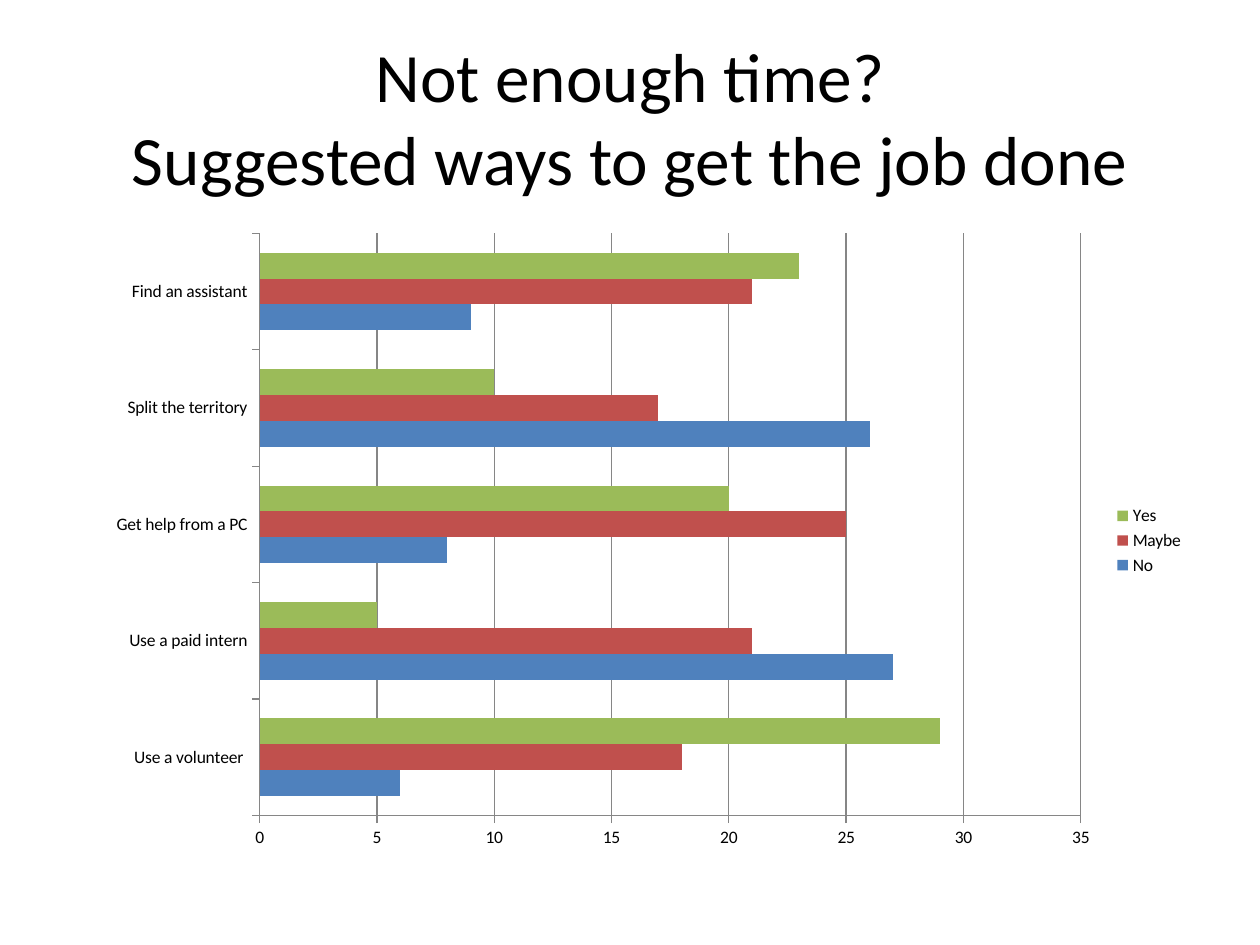
from pptx import Presentation
from pptx.chart.data import CategoryChartData
from pptx.dml.color import RGBColor
from pptx.enum.chart import XL_CHART_TYPE, XL_LEGEND_POSITION, XL_TICK_MARK
from pptx.enum.text import MSO_ANCHOR, PP_ALIGN
from pptx.util import Inches, Pt

BAR_CLUSTERED = XL_CHART_TYPE.BAR_CLUSTERED
LEGEND_RIGHT = XL_LEGEND_POSITION.RIGHT
TICK_OUTSIDE = XL_TICK_MARK.OUTSIDE
MIDDLE = MSO_ANCHOR.MIDDLE
CENTER = PP_ALIGN.CENTER

FONT = "Calibri"
BLACK = "000000"
AXIS_GRAY = "868686"
TITLE = "Not enough time?\vSuggested ways to get the job done"
SUGGESTIONS = [
    "Use a volunteer ",
    "Use a paid intern",
    "Get help from a PC",
    "Split the territory",
    "Find an assistant",
]
ANSWERS = [
    ("No", "4F81BD", [6, 27, 8, 26, 9]),
    ("Maybe", "C0504D", [18, 21, 25, 17, 21]),
    ("Yes", "9BBB59", [29, 5, 20, 10, 23]),
]


def color(value):
    """Turn a hex string into a colour."""
    return RGBColor.from_string(value)


def apply_format(target, values):
    """Set each attribute named in a dict of format values."""
    for name, value in values.items():
        setattr(target, name, value)


def style_font(font, size):
    """Give a font the typeface, size and colour of this slide."""
    apply_format(font, {"name": FONT, "size": Pt(size), "bold": False})
    font.color.rgb = color(BLACK)


def style_line(line):
    """Make a chart line thin and gray."""
    line.width = Pt(0.75)
    line.color.rgb = color(AXIS_GRAY)


def add_title(page, text, left, top, width, height):
    """Add the centred title."""
    box = page.shapes.add_textbox(Inches(left), Inches(top), Inches(width), Inches(height))
    frame = box.text_frame
    apply_format(frame, {"word_wrap": True, "vertical_anchor": MIDDLE})
    para = frame.paragraphs[0]
    para.text = text
    para.alignment = CENTER
    for span in para.runs:
        style_font(span.font, 39.6)


def style_axis(axis, gridlines):
    """Format one chart axis."""
    apply_format(axis, {
        "has_major_gridlines": gridlines,
        "major_tick_mark": TICK_OUTSIDE,
    })
    style_line(axis.format.line)
    if gridlines:
        style_line(axis.major_gridlines.format.line)


def add_answer_chart(page, left, top, width, height):
    """Add the clustered bar chart of answers to each suggestion."""
    data = CategoryChartData()
    data.categories = SUGGESTIONS
    for name, _, counts in ANSWERS:
        data.add_series(name, counts)
    frame = page.shapes.add_chart(
        BAR_CLUSTERED, Inches(left), Inches(top), Inches(width), Inches(height), data
    )
    chart = frame.chart
    apply_format(chart, {"has_title": False, "has_legend": True})
    style_font(chart.font, 10)
    apply_format(chart.legend, {"position": LEGEND_RIGHT, "include_in_layout": False})
    style_axis(chart.category_axis, False)
    style_axis(chart.value_axis, True)
    apply_format(chart.value_axis, {"minimum_scale": 0, "maximum_scale": 35, "major_unit": 5})
    plot = chart.plots[0]
    apply_format(plot, {"gap_width": 150, "vary_by_categories": False})
    for series, (_, fill, _) in zip(plot.series, ANSWERS):
        series.format.fill.solid()
        series.format.fill.fore_color.rgb = color(fill)


def main():
    """Build and save the slide."""
    deck = Presentation()
    apply_format(deck, {"slide_width": Inches(10), "slide_height": Inches(7.5)})
    page = deck.slides.add_slide(deck.slide_layouts[6])
    add_title(page, TITLE, 0.5, 0.3, 9, 1.25)
    add_answer_chart(page, 0.75, 1.75, 8.75, 5.08)
    deck.save("out.pptx")


if __name__ == "__main__":
    main()
